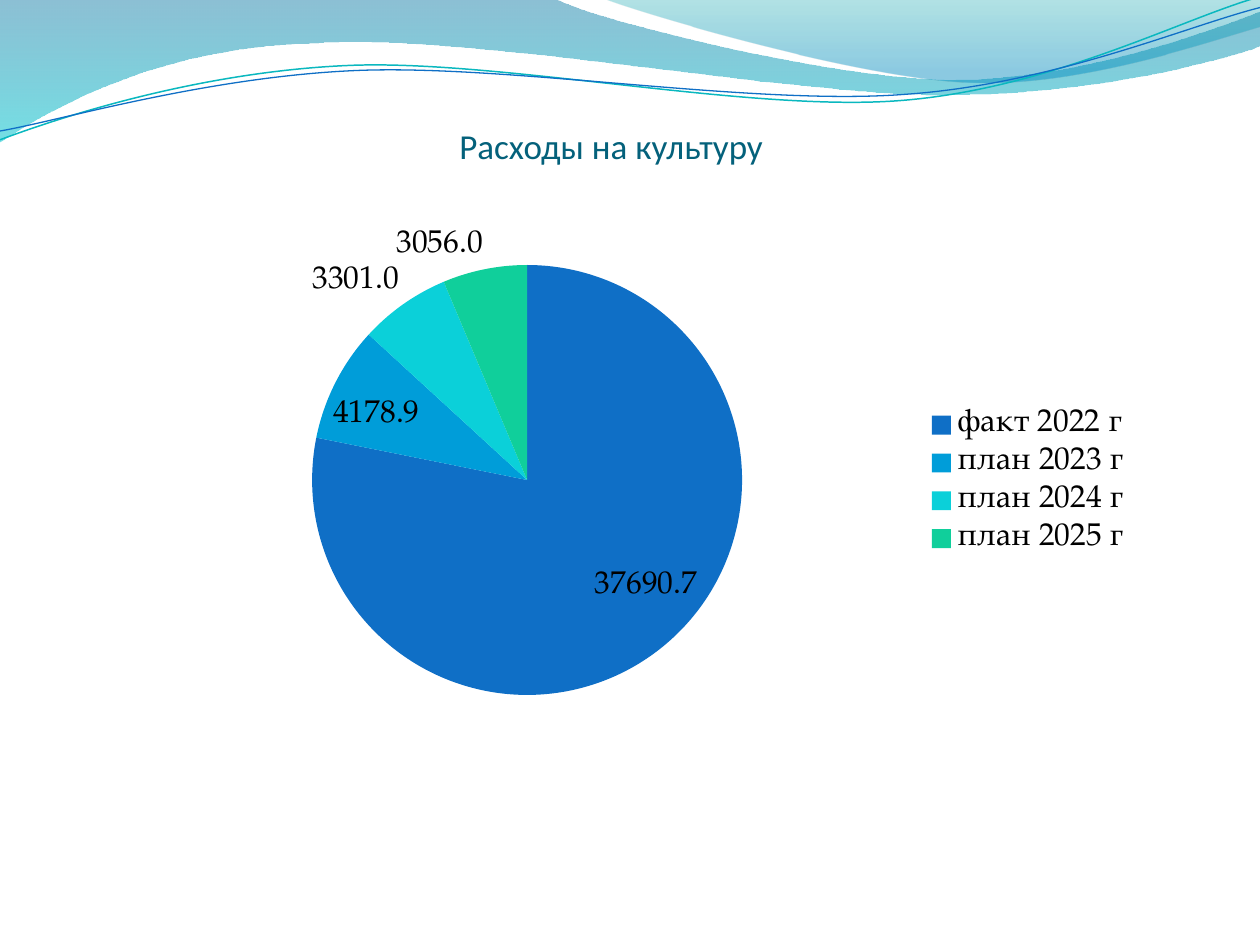
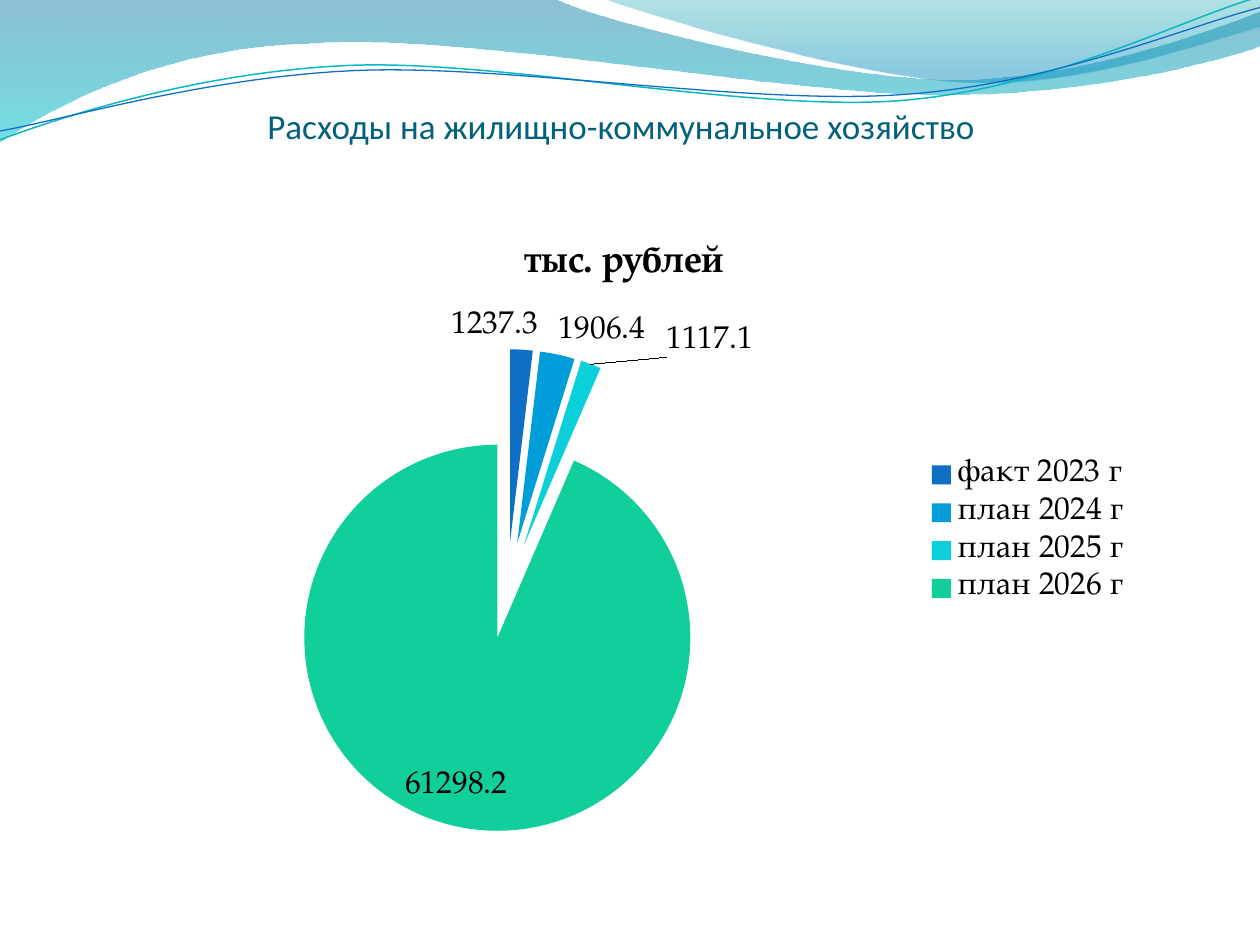
from lxml.etree import SubElement
from pptx import Presentation
from pptx.chart.data import CategoryChartData
from pptx.dml.color import RGBColor
from pptx.enum.chart import XL_CHART_TYPE as ChartType
from pptx.enum.chart import XL_LABEL_POSITION as LabelPos
from pptx.enum.chart import XL_LEGEND_POSITION as LegendPos
from pptx.enum.text import MSO_ANCHOR as Anchor
from pptx.enum.text import PP_ALIGN as Align
from pptx.oxml import parse_xml
from pptx.oxml.ns import nsdecls, qn
from pptx.util import Inches, Pt

COL = ROW = Inches(1)
COLS, ROWS = 10, 7.5
TITLE_FONT, CHART_FONT = "Calibri", "TeX Gyre Pagella"
BLACK = RGBColor(0x00, 0x00, 0x00)
TITLE_BLUE = RGBColor(0x04, 0x61, 0x7B)
BLUE = RGBColor(0x0F, 0x6F, 0xC6)
SKY = RGBColor(0x00, 0x9D, 0xD9)
CYAN = RGBColor(0x0B, 0xD0, 0xD9)
GREEN = RGBColor(0x10, 0xCF, 0x9B)
TEAL = RGBColor(0x0A, 0xB8, 0xBF)
SLICES = BLUE, SKY, CYAN, GREEN

LEFT_WAVE = [
    [(0, 0)], [(4.4, -0.01)],
    [(4.76, 0.17), (6.64, 0.63), (7.58, 0.63)],
    [(8.53, 0.63), (9.58, 0.26), (10, 0.09)],
    [(10.01, 0.36)],
    [(9.83, 0.44), (8.7, 0.76), (7.46, 0.75)],
    [(6.22, 0.75), (3.82, 0.28), (2.57, 0.34)],
    [(1.29, 0.36), (0.46, 0.83), (-0.01, 1.13)],
    [(0, 0)],
]
RIGHT_WAVE = [
    [(4.79, -0.01)],
    [(5.09, 0.11), (6.82, 0.62), (7.69, 0.65)],
    [(8.56, 0.69), (9.61, 0.32), (10, 0.21)],
    [(10, 0)],
    [(4.79, -0.01)],
]
TEAL_CURVE = [
    [(0, 1.11)],
    [(0.48, 0.93), (1.58, 0.57), (2.77, 0.52)],
    [(3.95, 0.47), (5.93, 0.89), (7.13, 0.8)],
    [(8.33, 0.71), (9.38, 0.15), (9.98, -0.02)],
]
BLUE_CURVE = [
    [(0, 1.04)],
    [(0.47, 0.96), (1.64, 0.61), (2.83, 0.56)],
    [(4.03, 0.51), (5.97, 0.84), (7.17, 0.75)],
    [(8.36, 0.67), (9.41, 0.21), (10, 0.06)],
]
WAVES = [
    (LEFT_WAVE, [(0, RGBColor(0x00, 0x74, 0xA1), 45),
                 (1, RGBColor(0x00, 0xC6, 0xCF), 55)]),
    (RIGHT_WAVE, [(0, RGBColor(0x00, 0xA1, 0xA9), 30),
                  (0.8, RGBColor(0x00, 0x8B, 0xBF), 45)]),
]
CURVES = [(TEAL_CURVE, TEAL, 0.85), (BLUE_CURVE, BLUE, 0.75)]


def grid(box):
    """Turn a box in columns and rows into slide lengths."""
    x, y, w, h = box
    return int(x * COL), int(y * ROW), int(w * COL), int(h * ROW)


def add_outline(slide, segments, close):
    """Draw a freeform of straight lines and cubic curves."""
    points = [(round(x * COL), round(y * ROW))
              for seg in segments for x, y in seg]
    builder = slide.shapes.build_freeform(*points[0])
    builder.add_line_segments(points[1:], close=close)
    sp = builder.convert_to_shape()
    sp.shadow.inherit = False
    lines = iter(list(sp._element.iter(qn("a:lnTo"))))
    for seg in segments[1:]:
        parts = [next(lines) for _ in seg]
        if len(parts) == 3:
            curve = parse_xml(f'<a:cubicBezTo {nsdecls("a")}/>')
            parts[0].addprevious(curve)
            for part in parts:
                curve.append(part[0])
                part.getparent().remove(part)
    return sp


def add_header(slide):
    """Draw the two gradient waves and two thin curves at the top."""
    for segments, stops in WAVES:
        sp = add_outline(slide, segments, True)
        sp.line.fill.background()
        sp.fill.gradient()
        sp.fill.gradient_angle = 270
        for stop, (position, color, _) in zip(sp.fill.gradient_stops, stops):
            stop.position = position
            stop.color.rgb = color
        colors = sp._element.spPr.iter(qn("a:srgbClr"))
        for node, (_, _, opacity) in zip(list(colors), stops):
            SubElement(node, qn("a:alpha")).set("val", str(opacity * 1000))
    for segments, color, width in CURVES:
        sp = add_outline(slide, segments, False)
        sp.fill.background()
        sp.line.color.rgb = color
        sp.line.width = Pt(width)


def style_font(font, name, size, color=BLACK, bold=False):
    """Set the face, size, colour and weight of a font."""
    font.name, font.size, font.bold = name, Pt(size), bold
    font.color.rgb = color


def add_text(slide, text, box, align=Align.CENTER, **style):
    """Place one line of text at the bottom of a box."""
    tf = slide.shapes.add_textbox(*grid(box)).text_frame
    tf.word_wrap = True
    tf.vertical_anchor = Anchor.BOTTOM
    tf.margin_left = tf.margin_right = tf.margin_bottom = 0
    p = tf.paragraphs[0]
    p.alignment = align
    r = p.add_run()
    r.text = text
    style_font(r.font, **style)


def set_plot_box(chart, box):
    """Fix the inner plot area as percentages of the chart."""
    area = chart._chartSpace.chart.plotArea
    for old in area.findall(qn("c:layout")):
        area.remove(old)
    sizes = "".join(f'<c:{k} val="{v / 100}"/>' for k, v in zip("xywh", box))
    area.insert(0, parse_xml(
        f'<c:layout {nsdecls("c")}><c:manualLayout>'
        '<c:layoutTarget val="inner"/><c:xMode val="edge"/>'
        f'<c:yMode val="edge"/>{sizes}</c:manualLayout></c:layout>'))


def add_pie(slide, box, categories, values, name="Series 1",
            titled=False, plot_box=None, explosion=0):
    """Place a pie chart with value labels and a legend on the right."""
    data = CategoryChartData(number_format="0.0")
    data.categories = categories
    data.add_series(name, values)
    chart = slide.shapes.add_chart(ChartType.PIE, *grid(box), data).chart
    style_font(chart.font, CHART_FONT, 18)
    chart.has_title = titled
    if titled:
        tf = chart.chart_title.text_frame
        tf.text = name
        style_font(tf.paragraphs[0].runs[0].font, CHART_FONT, 21.6, bold=True)
    chart.has_legend = True
    chart.legend.position = LegendPos.RIGHT
    chart.legend.include_in_layout = False
    plot = chart.plots[0]
    plot.vary_by_categories = True
    series = plot.series[0]
    for i, color in enumerate(SLICES):
        fill = series.points[i].format.fill
        fill.solid()
        fill.fore_color.rgb = color
    if explosion:
        series._element.find(qn("c:dPt")).addprevious(parse_xml(
            f'<c:explosion {nsdecls("c")} val="{explosion}"/>'))
    plot.has_data_labels = True
    labels = plot.data_labels
    labels.show_value = True
    labels.show_percentage = False
    labels.number_format = "0.0"
    labels.number_format_is_linked = False
    labels.position = LabelPos.BEST_FIT
    for node in labels._element.findall(qn("c:showLeaderLines")):
        node.set("val", "1")
    if plot_box:
        set_plot_box(chart, plot_box)


def add_expense_slide(prs, title, title_at, chart_rows, first_year,
                      values, **pie):
    """Build one expense slide: header, title and pie chart."""
    slide = prs.slides.add_slide(prs.slide_layouts[6])
    add_header(slide)
    add_text(slide, title, (*title_at, 7.42, 0.72),
             name=TITLE_FONT, size=20, color=TITLE_BLUE)
    categories = [f"{'план' if i else 'факт'} {first_year + i} г"
                  for i in range(len(values))]
    add_pie(slide, (0.83, 1.7, 8.25, chart_rows), categories, values, **pie)


def main():
    """Build and save the presentation."""
    prs = Presentation()
    prs.slide_width, prs.slide_height = COLS * COL, int(ROWS * ROW)
    add_expense_slide(prs, "Расходы на культуру", (1.14, 0.6), 4.25, 2022,
                      (37690.7, 4178.9, 3301, 3056),
                      plot_box=(7.5, 9.5, 66.3, 80.3))
    add_expense_slide(prs, "Расходы на жилищно-коммунальное хозяйство",
                      (1.22, 0.44), 5.04, 2023,
                      (1237.3, 1906.4, 1117.1, 61298.2),
                      name="тыс. рублей", titled=True, explosion=25)
    prs.save("out.pptx")


if __name__ == "__main__":
    main()
